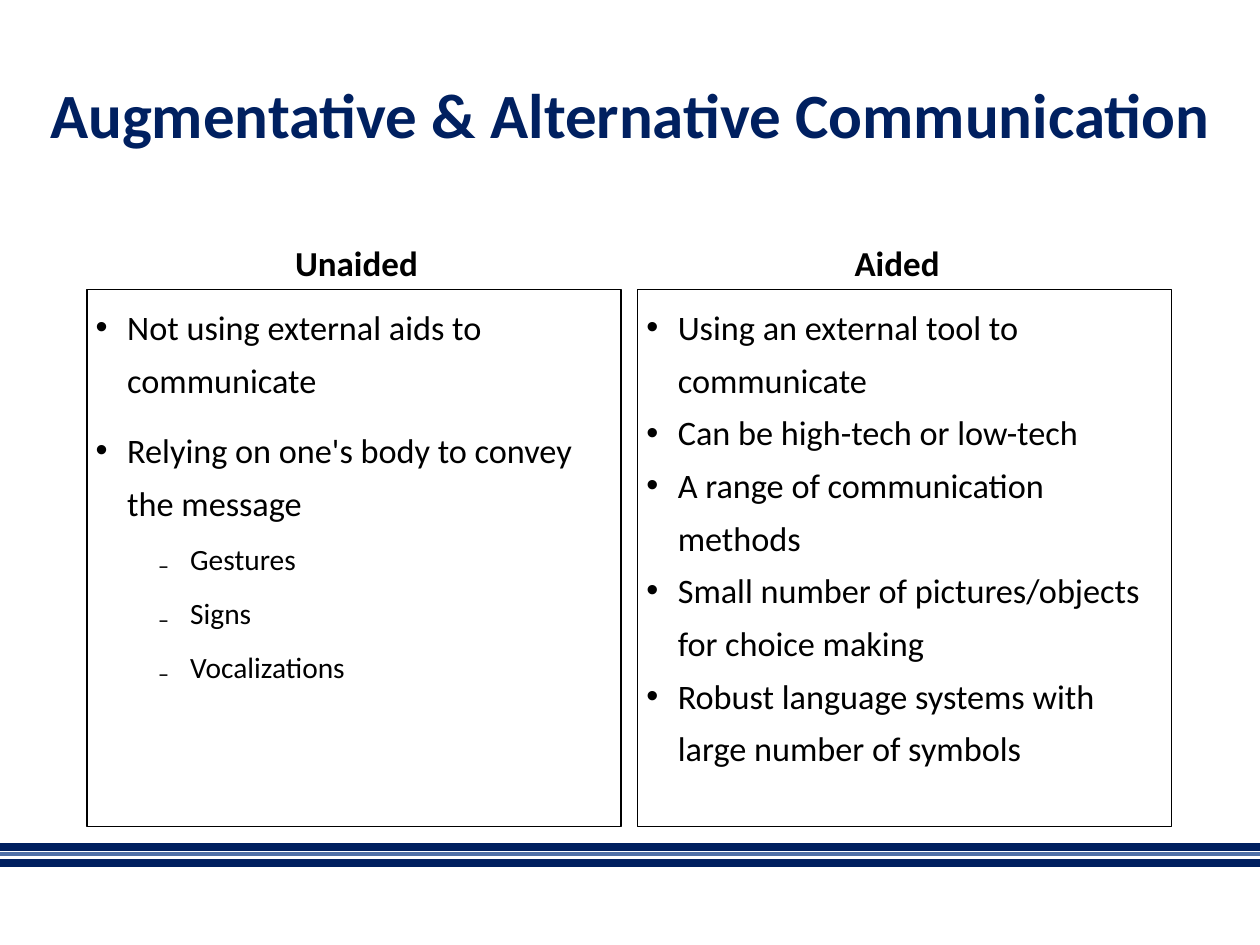
import pptx
import pptx.util
import pptx.dml.color
import pptx.enum.shapes
import pptx.enum.text
import pptx.oxml.ns
import lxml.etree

# Content
TITLE = "Augmentative & Alternative Communication"
COLUMNS = [
    {"heading": "Unaided", "gaps": (10, 5), "items": [
        (0, "Not using external aids to communicate"),
        (0, "Relying on one's body to convey the message"),
        (1, "Gestures"), (1, "Signs"), (1, "Vocalizations")]},
    {"heading": "Aided", "gaps": (0, 0), "items": [
        (0, "Using an external tool to communicate"),
        (0, "Can be high-tech or low-tech"),
        (0, "A range of communication methods"),
        (0, "Small number of pictures/objects for choice making"),
        (0, "Robust language systems with large number of symbols")]},
]

# Format
THEME = {
    "font": "Calibri", "title": "002060", "text": "000000", "frame": "000000",
    "title_size": 36, "heading_size": 20, "item_sizes": (19.6, 16.8),
    "tight": 0.9, "loose": 1.28,
}
BULLETS = [("•", 0.25), ("₋", 0.75)]  # sign and left margin for each level
HANG = 0.25
STRIPES = [(6.72, "001F5F", 4.5), (6.78, "5070A7", 2.25), (6.85, "001F5F", 4.5)]

# Layout in inches
WIDTH, HEIGHT = 10, 7.5
TITLE_AREA = (0.05, 0.4, WIDTH - 0.1, 1.45)
PANEL_LEFT, PANEL_STEP, PANEL_WIDTH = 0.69, 4.37, 4.24
PANEL_TOP, PANEL_HEIGHT = 2.3, 4.26
HEADING_LEFT, HEADING_STEP, HEADING_HEIGHT = 0.71, 4.29, 0.9

INCH, POINT = pptx.util.Inches, pptx.util.Pt
ANCHOR, ALIGN = pptx.enum.text.MSO_ANCHOR, pptx.enum.text.PP_ALIGN


def rgb(value):
    return pptx.dml.color.RGBColor.from_string(value)


def apply(target, formats):
    for name, value in formats.items():
        setattr(target, name, value)


def add_child(parent, tag, **attributes):
    return lxml.etree.SubElement(parent, pptx.oxml.ns.qn(tag), attributes)


def write(para, text, size, color, bold=False):
    span = para.add_run()
    span.text = text
    apply(span.font, {"name": THEME["font"], "size": POINT(size), "bold": bold})
    span.font.color.rgb = rgb(color)


def add_label(page, area, text, size, color, anchor, bottom=0.05):
    box = page.shapes.add_textbox(*map(INCH, area))
    apply(box.text_frame, {"word_wrap": True, "vertical_anchor": anchor,
                           "margin_bottom": INCH(bottom)})
    para = box.text_frame.paragraphs[0]
    apply(para, {"alignment": ALIGN.CENTER, "line_spacing": THEME["tight"]})
    write(para, text, size, color, bold=True)


def add_panel(page, area, items, gaps):
    box = page.shapes.add_shape(pptx.enum.shapes.MSO_SHAPE.RECTANGLE, *map(INCH, area))
    box.shadow.inherit = False
    box.fill.background()
    box.line.color.rgb = rgb(THEME["frame"])
    box.line.width = POINT(0.75)
    frame = box.text_frame
    apply(frame, {"word_wrap": True, "vertical_anchor": ANCHOR.TOP,
                  "margin_left": INCH(0.07), "margin_right": INCH(0.07),
                  "margin_top": INCH(0.04), "margin_bottom": INCH(0.04)})
    for index, (level, text) in enumerate(items):
        para = frame.add_paragraph() if index else frame.paragraphs[0]
        apply(para, {"level": level, "alignment": ALIGN.LEFT,
                     "line_spacing": THEME["loose"],
                     "space_before": POINT(gaps[level] if index else 0)})
        sign, margin = BULLETS[level]
        properties = para._p.get_or_add_pPr()
        properties.set("marL", str(INCH(margin)))
        properties.set("indent", str(-INCH(HANG)))
        add_child(properties, "a:buFont", typeface="Arial")
        add_child(properties, "a:buChar", char=sign)
        write(para, text, THEME["item_sizes"][level], THEME["text"])


def add_stripe(page, top, color, width):
    stripe = page.shapes.add_connector(
        pptx.enum.shapes.MSO_CONNECTOR.STRAIGHT, 0, INCH(top), INCH(WIDTH), INCH(top))
    stripe.line.color.rgb = rgb(color)
    stripe.line.width = POINT(width)
    add_child(stripe._element.spPr, "a:effectLst")


def main():
    deck = pptx.Presentation()
    apply(deck, {"slide_width": INCH(WIDTH), "slide_height": INCH(HEIGHT)})
    page = deck.slides.add_slide(deck.slide_layouts[6])

    # Footer stripes
    for stripe in STRIPES:
        add_stripe(page, *stripe)

    # Title, lifted above the middle by a deep bottom margin
    add_label(page, TITLE_AREA, TITLE, THEME["title_size"], THEME["title"],
              ANCHOR.MIDDLE, bottom=0.42)

    # Headed columns
    for index, column in enumerate(COLUMNS):
        heading_area = (HEADING_LEFT + index * HEADING_STEP, PANEL_TOP - HEADING_HEIGHT,
                        PANEL_WIDTH, HEADING_HEIGHT)
        add_label(page, heading_area, column["heading"], THEME["heading_size"],
                  THEME["text"], ANCHOR.BOTTOM)
        panel_area = (PANEL_LEFT + index * PANEL_STEP, PANEL_TOP,
                      PANEL_WIDTH, PANEL_HEIGHT)
        add_panel(page, panel_area, column["items"], column["gaps"])

    deck.save("out.pptx")


if __name__ == "__main__":
    main()
